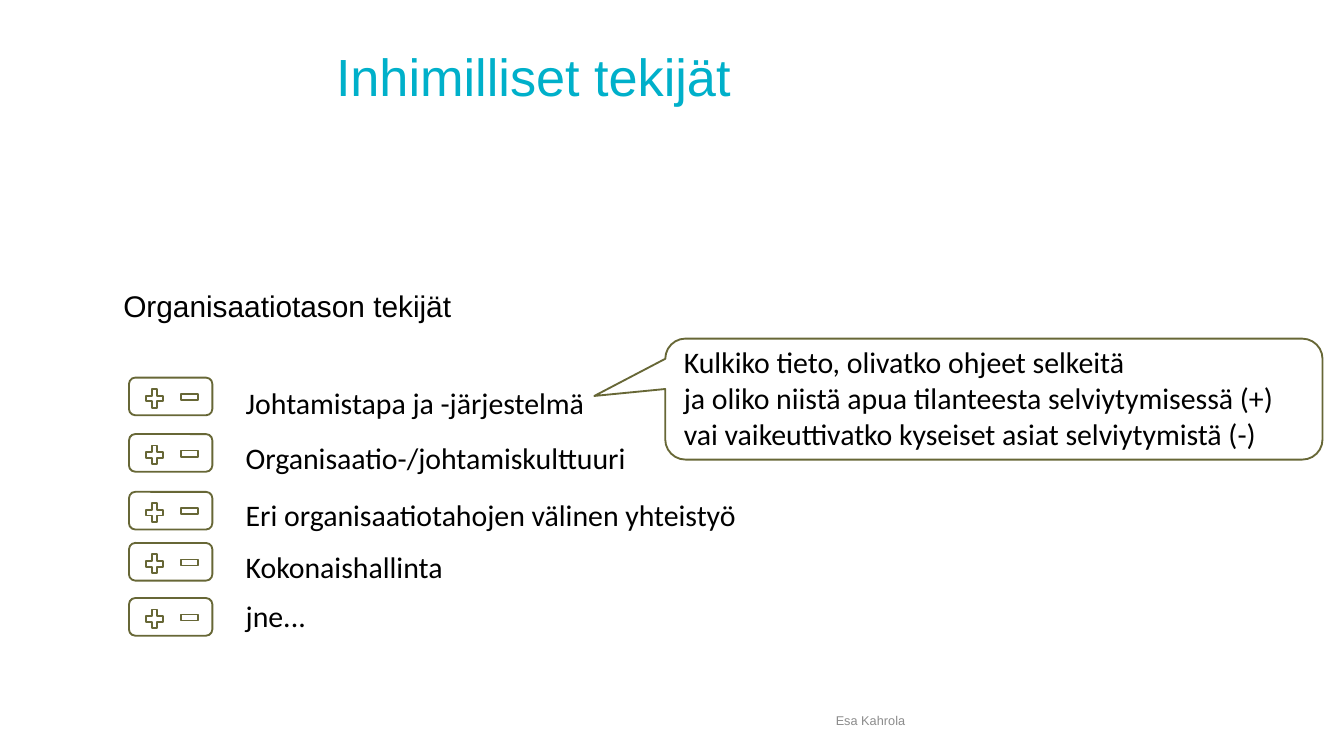
from pptx import Presentation
from pptx.dml.color import RGBColor
from pptx.enum.shapes import MSO_SHAPE
from pptx.enum.text import MSO_ANCHOR, MSO_AUTO_SIZE, PP_ALIGN
from pptx.util import Inches, Pt

ROUNDED = MSO_SHAPE.ROUNDED_RECTANGLE
PLUS = MSO_SHAPE.MATH_PLUS
MINUS = MSO_SHAPE.MATH_MINUS
CALLOUT = MSO_SHAPE.ROUNDED_RECTANGULAR_CALLOUT
MIDDLE = MSO_ANCHOR.MIDDLE
LEFT = PP_ALIGN.LEFT
GROW = MSO_AUTO_SIZE.SHAPE_TO_FIT_TEXT
NO_FIT = MSO_AUTO_SIZE.NONE

OLIVE = "676736"
BLACK = "000000"
TURQUOISE = "00B0CA"
GREY = "8C8C8C"

FACTORS = [
    ("Johtamistapa ja -järjestelmä", 2.81, 2.81, 2.75),
    ("Organisaatio-/johtamiskulttuuri", 3.22, 3.23, 3.07),
    ("Eri organisaatiotahojen välinen yhteistyö", 3.65, 3.66, 3.98),
    ("Kokonaishallinta", 4.03, 4.04, 1.68),
    ("jne...", 4.4, 4.45, 0.65),
]
QUESTION = [
    "Kulkiko tieto, olivatko ohjeet selkeitä",
    "ja oliko niistä apua tilanteesta selviytymisessä (+)",
    "vai vaikeuttivatko kyseiset asiat selviytymistä (-)",
]


def color(hex_value):
    return RGBColor.from_string(hex_value)


def write(paragraph, text, size, font_name, hex_value):
    paragraph.alignment = LEFT
    run = paragraph.add_run()
    run.text = text
    run.font.size = Pt(size)
    run.font.name = font_name
    run.font.color.rgb = color(hex_value)


def add_title(slide, text):
    title = slide.shapes.title
    title.left, title.top = Inches(2.4), Inches(0.34)
    title.width, title.height = Inches(7.24), Inches(0.5)
    frame = title.text_frame
    frame.auto_size = NO_FIT
    frame.vertical_anchor = MIDDLE
    frame.paragraphs[0].line_spacing = 0.9
    write(frame.paragraphs[0], text, 28, "Arial", TURQUOISE)


def add_label(slide, lines, left, top, width, height=0.37, font_name="Calibri"):
    label = slide.shapes.add_textbox(Inches(left), Inches(top), Inches(width), Inches(height))
    frame = label.text_frame
    frame.word_wrap = False
    frame.auto_size = GROW
    for index, line in enumerate(lines):
        paragraph = frame.add_paragraph() if index else frame.paragraphs[0]
        write(paragraph, line, 16, font_name, BLACK)


def add_outline(slide, kind, left, top, width, height):
    outline = slide.shapes.add_shape(kind, Inches(left), Inches(top), Inches(width), Inches(height))
    outline.shadow.inherit = False
    outline.fill.background()
    outline.line.color.rgb = color(OLIVE)
    outline.line.width = Pt(1)
    return outline


def add_rating(slide, top):
    add_outline(slide, ROUNDED, 0.96, top, 0.62, 0.28)
    add_outline(slide, PLUS, 1.06, top + 0.06, 0.18, 0.19)
    add_outline(slide, MINUS, 1.32, top + 0.05, 0.18, 0.19)


def add_question(slide):
    bubble = add_outline(slide, CALLOUT, 4.95, 2.52, 4.89, 0.9)
    for index, value in enumerate((-0.608, -0.026, 0.167)):
        bubble.adjustments[index] = value
    add_label(slide, QUESTION, 4.99, 2.51, 4.64, 1.11)


def add_author(slide, name):
    author = slide.shapes.add_textbox(Inches(6.12), Inches(5.21), Inches(3.19), Inches(0.3))
    frame = author.text_frame
    frame.word_wrap = True
    frame.vertical_anchor = MIDDLE
    write(frame.paragraphs[0], name, 6.8, "Arial", GREY)


def main():
    presentation = Presentation()
    presentation.slide_width = Inches(10)
    presentation.slide_height = Inches(10) * 9 // 16
    slide = presentation.slides.add_slide(presentation.slide_layouts[5])

    add_title(slide, "Inhimilliset tekijät")
    for factor, label_top, _, width in FACTORS:
        add_label(slide, [factor], 1.73, label_top, width)
    add_label(slide, ["Organisaatiotason tekijät"], 0.82, 2.09, 2.67, font_name="Arial")
    for _, _, rating_top, _ in FACTORS:
        add_rating(slide, rating_top)
    add_question(slide)
    add_author(slide, "Esa Kahrola")

    presentation.save("out.pptx")


if __name__ == "__main__":
    main()
